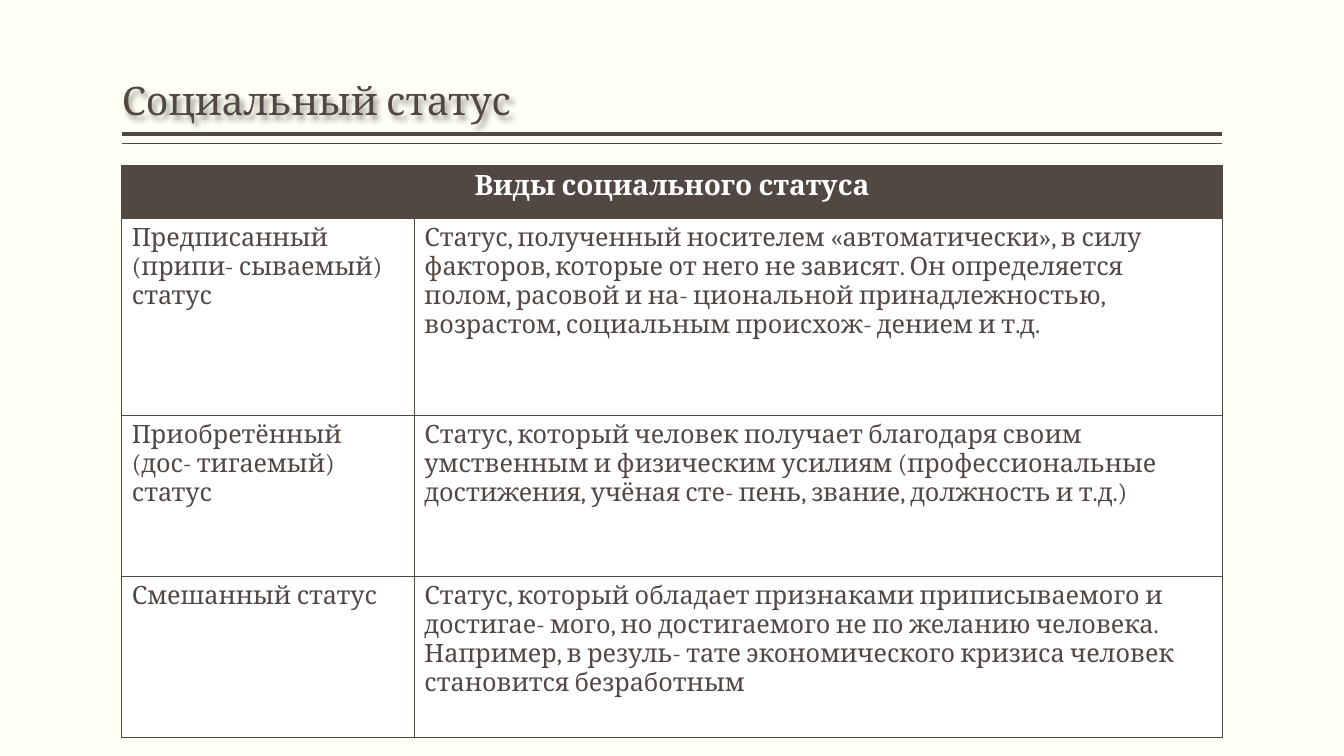
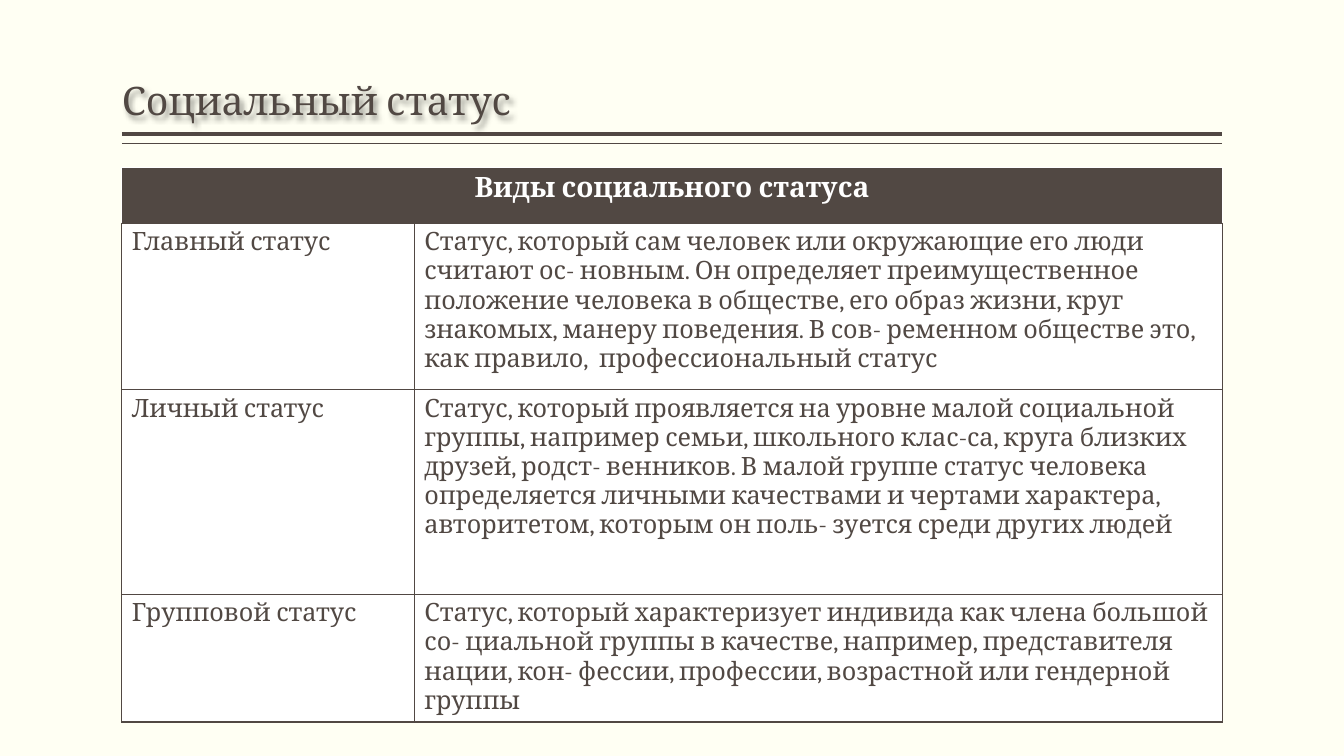
from lxml.etree import SubElement
from pptx import Presentation
from pptx.dml.color import RGBColor
from pptx.enum.shapes import MSO_CONNECTOR
from pptx.enum.text import MSO_ANCHOR, PP_ALIGN
from pptx.oxml import parse_xml
from pptx.oxml.ns import nsdecls, qn
from pptx.util import Pt

HUES = {"page": "FFFFF3", "brown": "514843", "white": "FFFFFF", "shade": "000000"}
FACE = "Cambria"
LEFT, WIDTH = 87, 786
COLS = (209, 577)
RULES = ((95.8, 3), (102.6, 1))
FONTS = {
    "title": {"name": FACE, "size": Pt(28), "bold": False},
    "head": {"name": FACE, "size": Pt(20), "bold": True},
    "body": {"name": FACE, "size": Pt(18), "bold": False},
}
TITLE_BOX = {"left": Pt(LEFT), "top": Pt(5.8), "width": Pt(WIDTH), "height": Pt(86.4)}
TITLE_FRAME = {
    "margin_left": 0,
    "margin_right": 0,
    "margin_top": Pt(3.6),
    "margin_bottom": Pt(3.6),
    "vertical_anchor": MSO_ANCHOR.BOTTOM,
}
TITLE_PARA = {"alignment": PP_ALIGN.LEFT, "line_spacing": 0.9}
TITLE = "Социальный статус"
HEAD = "Виды социального статуса"

SLIDES = (
    {
        "top": 118,
        "edge": "brown",
        "rows": (38, 141, 114.8, 114.8),
        "cells": (
            (
                "Предписанный (припи- сываемый) статус",
                "Статус, полученный носителем «автоматически», в силу факторов, "
                "которые от него не зависят. Он определяется полом, расовой и на- "
                "циональной принадлежностью, возрастом, социальным происхож- "
                "дением и т.д.",
            ),
            (
                "Приобретённый (дос- тигаемый) статус",
                "Статус, который человек получает благодаря своим умственным и "
                "физическим усилиям (профессиональные достижения, учёная сте- "
                "пень, звание, должность и т.д.)",
            ),
            (
                "Смешанный статус",
                "Статус, который обладает признаками приписываемого и достигае- "
                "мого, но достигаемого не по желанию человека. Например, в резуль- "
                "тате экономического кризиса человек становится безработным",
            ),
        ),
    },
    {
        "top": 119.8,
        "edge": "white",
        "rows": (39.6, 118.8, 146.2, 91.4),
        "cells": (
            (
                "Главный статус",
                "Статус, который сам человек или окружающие его люди считают ос- "
                "новным. Он определяет преимущественное положение человека в "
                "обществе, его образ жизни, круг знакомых, манеру поведения. В сов- "
                "ременном обществе это, как правило,  профессиональный статус",
            ),
            (
                "Личный статус",
                "Статус, который проявляется на уровне малой социальной группы, "
                "например семьи, школьного клас-са, круга близких друзей, родст- "
                "венников. В малой группе статус человека определяется личными "
                "качествами и чертами характера, авторитетом, которым он поль- "
                "зуется среди других людей",
            ),
            (
                "Групповой статус",
                "Статус, который характеризует индивида как члена большой со- "
                "циальной группы в качестве, например, представителя нации, кон- "
                "фессии, профессии, возрастной или гендерной группы",
            ),
        ),
    },
)


def tint(name):
    return RGBColor.from_string(HUES[name])


def apply(item, values):
    for key, value in values.items():
        setattr(item, key, value)


def style(para, kind, hue):
    apply(para.font, FONTS[kind])
    para.font.color.rgb = tint(hue)


def add_shade(shape):
    shape.element.spPr.append(parse_xml(
        f'<a:effectLst {nsdecls("a")}>'
        '<a:outerShdw blurRad="50800" dist="38100" dir="2700000" algn="tl" rotWithShape="0">'
        f'<a:srgbClr val="{HUES["shade"]}"><a:alpha val="40000"/></a:srgbClr>'
        '</a:outerShdw></a:effectLst>'
    ))


def set_base(deck, layout):
    back = deck.slide_master.background.fill
    back.solid()
    back.fore_color.rgb = tint("page")
    title = layout.placeholders[0]
    apply(title, TITLE_BOX)
    apply(title.text_frame, TITLE_FRAME)


def add_rules(slide, layout):
    for index, (y, weight) in enumerate(RULES):
        rule = slide.shapes.add_connector(
            MSO_CONNECTOR.STRAIGHT, Pt(LEFT), Pt(y), Pt(LEFT + WIDTH), Pt(y)
        )
        rule.line.width = Pt(weight)
        rule.line.color.rgb = tint("brown")
        SubElement(rule.element.spPr, qn("a:effectLst"))
        rule.element.nvCxnSpPr.cNvPr.id = 50 + index
        layout.shapes.element.append(rule.element)


def add_title(slide):
    title = slide.shapes.title
    title.text_frame.text = TITLE
    para = title.text_frame.paragraphs[0]
    apply(para, TITLE_PARA)
    style(para, "title", "brown")
    add_shade(title)


def set_edges(cell, hues):
    props = cell._tc.get_or_add_tcPr()
    for index, (side, hue) in enumerate(zip("LRTB", hues)):
        props.insert(index, parse_xml(
            f'<a:ln{side} {nsdecls("a")} w="{Pt(1)}"><a:solidFill>'
            f'<a:srgbClr val="{HUES[hue]}"/></a:solidFill></a:ln{side}>'
        ))


def fill_cell(cell, text, kind, ink, fill):
    cell.text = text
    cell.fill.solid()
    cell.fill.fore_color.rgb = tint(fill)
    style(cell.text_frame.paragraphs[0], kind, ink)


def add_grid(slide, data):
    rows = data["rows"]
    grid = slide.shapes.add_table(
        len(rows), len(COLS), Pt(LEFT), Pt(data["top"]), Pt(WIDTH), Pt(sum(rows))
    ).table
    apply(grid, {"first_row": False, "horz_banding": False})
    for col, width in zip(grid.columns, COLS):
        col.width = Pt(width)
    for row, height in zip(grid.rows, rows):
        row.height = Pt(height)
    head = grid.cell(0, 0)
    head.merge(grid.cell(0, 1))
    fill_cell(head, HEAD, "head", "white", "brown")
    head.text_frame.paragraphs[0].alignment = PP_ALIGN.CENTER
    for cell in grid.rows[0].cells:
        set_edges(cell, [data["edge"]] * 3 + ["brown"])
    for r, texts in enumerate(data["cells"], 1):
        for c, text in enumerate(texts):
            cell = grid.cell(r, c)
            fill_cell(cell, text, "body", "brown", "white")
            set_edges(cell, ["brown"] * 4)


def main():
    deck = Presentation()
    apply(deck, {"slide_width": Pt(960), "slide_height": Pt(540)})
    layout = deck.slide_layouts[5]
    set_base(deck, layout)
    for index, data in enumerate(SLIDES):
        slide = deck.slides.add_slide(layout)
        if index == 0:
            add_rules(slide, layout)
        add_title(slide)
        add_grid(slide, data)
    deck.save("out.pptx")


if __name__ == "__main__":
    main()
